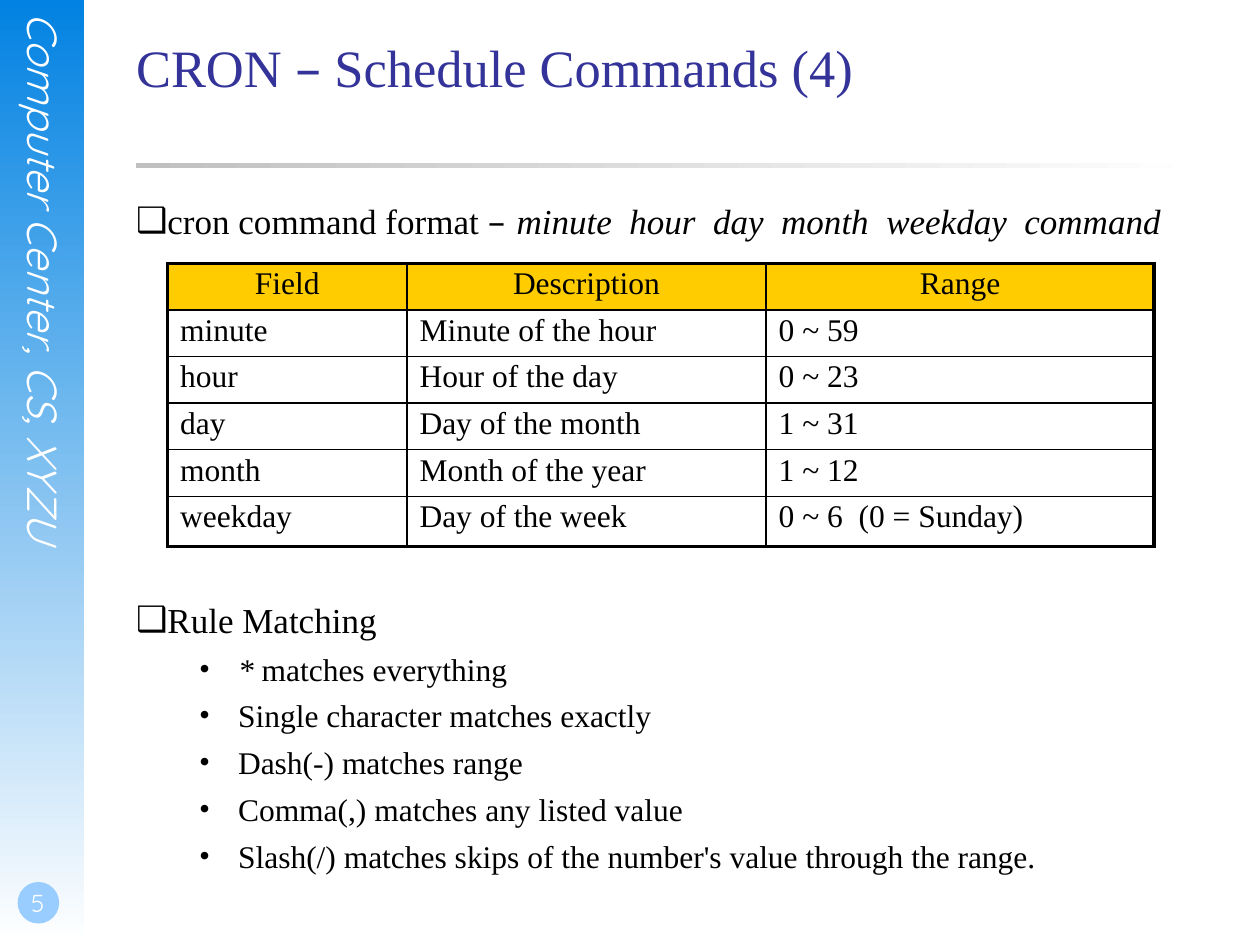
from typing import NamedTuple

from lxml.etree import SubElement
from pptx import Presentation
from pptx.dml.color import RGBColor
from pptx.enum.shapes import MSO_SHAPE as Shape
from pptx.enum.text import MSO_ANCHOR as Anchor, MSO_AUTO_SIZE as AutoSize, PP_ALIGN as Align
from pptx.oxml.ns import qn
from pptx.util import Inches, Pt

WHITE = RGBColor(0xFF, 0xFF, 0xFF)
BLACK = RGBColor(0x00, 0x00, 0x00)
RAIL_BLUE = RGBColor(0x02, 0x82, 0xE2)
BADGE_BLUE = RGBColor(0x99, 0xCC, 0xFF)
RULE_GREY = RGBColor(0xC0, 0xC0, 0xC0)
TITLE_BLUE = RGBColor(0x33, 0x33, 0x99)
HEADER_GOLD = RGBColor(0xFF, 0xCC, 0x00)

SERIF, SANS, RAIL_FONT = "Times New Roman", "DejaVu Sans", "Quicksand"
THIN, THICK = 1, 2.25


class Area(NamedTuple):
    left: float
    top: float
    width: float
    height: float

    def lengths(self) -> list:
        return [Inches(value) for value in self]


class Span(NamedTuple):
    text: str
    font: str = SERIF
    italic: bool = False


class Level(NamedTuple):
    depth: int
    bullet: str
    size: float
    margin: float
    indent: float


class Item(NamedTuple):
    level: Level
    spans: list


TOPIC = Level(0, "❑", 20, 0, 0)
POINT = Level(1, "•", 18, 0.81, -0.31)

COLUMN_WIDTHS = [1.9, 2.85, 3.08]
ROW_HEIGHTS = [0.37] * 5 + [0.4]
FIELDS = [
    ("Field", "Description", "Range"),
    ("minute", "Minute of the hour", "0 ~ 59"),
    ("hour", "Hour of the day", "0 ~ 23"),
    ("day", "Day of the month", "1 ~ 31"),
    ("month", "Month of the year", "1 ~ 12"),
    ("weekday", "Day of the week", "0 ~ 6  (0 = Sunday)"),
]
FORMAT_ITEMS = [
    Item(TOPIC, [
        Span("cron command format "),
        Span("– ", SANS),
        Span("minute  hour  day  month  weekday  command", italic=True),
    ]),
]
MATCHING_ITEMS = [
    Item(TOPIC, [Span("Rule Matching")]),
    Item(POINT, [Span("* ", italic=True), Span("matches everything")]),
    *(Item(POINT, [Span(text)]) for text in (
        "Single character matches exactly",
        "Dash(-) matches range",
        "Comma(,) matches any listed value",
        "Slash(/) matches skips of the number's value through the range.",
    )),
]


def add_block(page, kind, area: Area, color: RGBColor, fade_angle=None):
    """Add a borderless shape; with fade_angle it fades to white."""
    block = page.shapes.add_shape(kind, *area.lengths())
    block.shadow.inherit = False
    block.line.fill.background()
    if fade_angle is None:
        block.fill.solid()
        block.fill.fore_color.rgb = color
    else:
        block.fill.gradient()
        block.fill.gradient_angle = fade_angle
        for stop, shade in zip(block.fill.gradient_stops, (color, WHITE)):
            stop.color.rgb = shade


def set_frame(box, anchor=Anchor.TOP, margins=(0, 0, 0, 0)):
    frame = box.text_frame
    frame.word_wrap = True
    frame.auto_size = AutoSize.NONE
    frame.vertical_anchor = anchor
    (frame.margin_left, frame.margin_top,
     frame.margin_right, frame.margin_bottom) = map(Inches, margins)
    return frame


def set_font(font, name: str, size: float, color: RGBColor):
    font.name, font.size, font.color.rgb = name, Pt(size), color


def add_spans(para, spans: list, size: float, color: RGBColor):
    for span in spans:
        run = para.add_run()
        run.text = span.text
        set_font(run.font, span.font, size, color)
        run.font.italic = span.italic


def write_list(frame, items: list):
    for index, (level, spans) in enumerate(items):
        para = frame.add_paragraph() if index else frame.paragraphs[0]
        para.level = level.depth
        para.space_before = Pt(round(level.size * 0.29, 1))
        add_spans(para, spans, level.size, BLACK)
        properties = para._p.get_or_add_pPr()
        properties.set("marL", str(Inches(level.margin)))
        properties.set("indent", str(Inches(level.indent)))
        SubElement(properties, qn("a:buFont"), typeface=SANS if level is TOPIC else SERIF)
        SubElement(properties, qn("a:buChar"), char=level.bullet)


def add_borders(cell, widths: dict):
    properties = cell._tc.get_or_add_tcPr()
    for side, width in widths.items():
        line = SubElement(properties, qn(f"a:ln{side}"), w=str(Pt(width)))
        fill = SubElement(line, qn("a:solidFill"))
        SubElement(fill, qn("a:srgbClr"), val=str(BLACK))


def add_field_table(page, area: Area):
    last_row, last_column = len(FIELDS) - 1, len(COLUMN_WIDTHS) - 1
    table = page.shapes.add_table(last_row + 1, last_column + 1, *area.lengths()).table
    table.horz_banding = False
    for column, width in zip(table.columns, COLUMN_WIDTHS):
        column.width = Inches(width)
    for r, (row, height) in enumerate(zip(table.rows, ROW_HEIGHTS)):
        row.height = Inches(height)
        for c, cell in enumerate(row.cells):
            cell.text = FIELDS[r][c]
            para = cell.text_frame.paragraphs[0]
            para.line_spacing = 0.9
            para.alignment = Align.LEFT if r else Align.CENTER
            set_font(para.runs[0].font, SERIF, 18, BLACK)
            para.runs[0].font.bold = False
            # Thick frame outside, thin grid inside
            outer = {"L": c == 0, "R": c == last_column, "T": r == 0, "B": r == last_row}
            add_borders(cell, {side: THICK if edge else THIN for side, edge in outer.items()})
            if r:
                cell.fill.background()
            else:
                cell.fill.solid()
                cell.fill.fore_color.rgb = HEADER_GOLD


def main():
    deck = Presentation()
    deck.slide_width, deck.slide_height = Inches(10), Inches(7.5)
    page = deck.slides.add_slide(deck.slide_layouts[1])
    title, body = page.placeholders

    # Side rail with its vertical label and the page number
    add_block(page, Shape.RECTANGLE, Area(0, 0, 0.67, 7.5), RAIL_BLUE, fade_angle=270)
    label = page.shapes.add_textbox(*Area(0.15, 0.1, 0.4, 5.11).lengths())
    frame = set_frame(label)
    frame._txBody.bodyPr.set("vert", "eaVert")
    add_spans(frame.paragraphs[0], [Span("Computer Center, CS, XYZU", RAIL_FONT, True)], 24, WHITE)
    add_block(page, Shape.OVAL, Area(0.14, 7, 0.33, 0.33), BADGE_BLUE)
    number = page.shapes.add_textbox(*Area(0, 6.83, 0.58, 0.5).lengths())
    frame = set_frame(number, Anchor.BOTTOM, (0.02, 0, 0, 0.05))
    frame.paragraphs[0].alignment = Align.CENTER
    add_spans(frame.paragraphs[0], [Span("5", RAIL_FONT)], 14, WHITE)

    # Title and the rule below it
    add_block(page, Shape.RECTANGLE, Area(1.08, 1.29, 8.5, 0.04), RULE_GREY, fade_angle=0)
    title.left, title.top, title.width, title.height = Area(1.08, 0.28, 8.5, 1.25).lengths()
    heading = set_frame(title).paragraphs[0]
    heading.alignment = Align.LEFT
    add_spans(heading, [Span("CRON "), Span("–", SANS), Span(" Schedule Commands (4)")],
              30, TITLE_BLUE)

    # Command format, field table and matching rules
    body.left, body.top, body.width, body.height = Area(1.08, 1.58, 8.58, 4.67).lengths()
    write_list(set_frame(body), FORMAT_ITEMS)
    add_field_table(page, Area(1.33, 2.09, sum(COLUMN_WIDTHS), sum(ROW_HEIGHTS)))
    rules = page.shapes.add_textbox(*Area(1.08, 4.75, 7.83, 2.17).lengths())
    write_list(set_frame(rules), MATCHING_ITEMS)

    deck.save("out.pptx")


if __name__ == "__main__":
    main()
